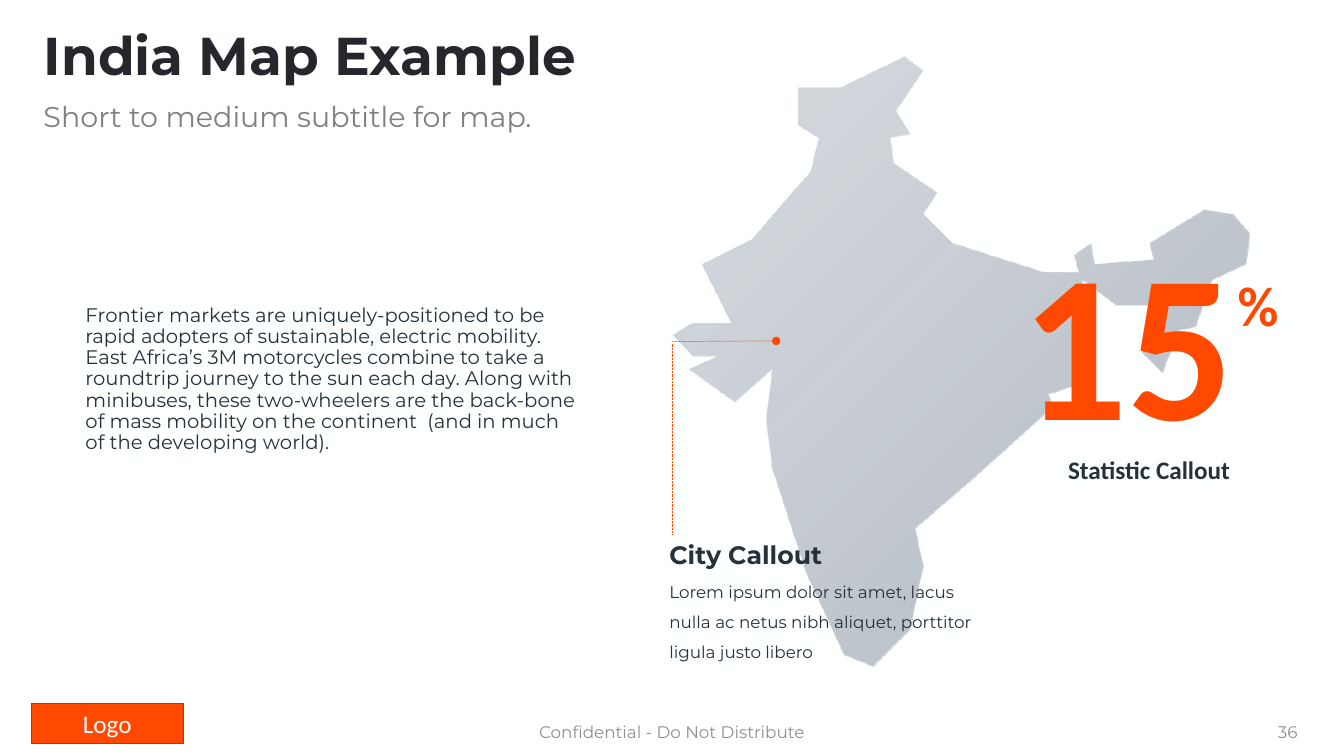
from lxml import etree
from pptx import Presentation
from pptx.dml.color import RGBColor
from pptx.enum.dml import MSO_LINE
from pptx.enum.shapes import MSO_CONNECTOR, MSO_SHAPE
from pptx.enum.text import MSO_ANCHOR, PP_ALIGN
from pptx.oxml import parse_xml
from pptx.oxml.ns import nsdecls, qn
from pptx.util import Pt

WHITE, ORANGE, INK, GREY = "FEFFFF", "FF4900", "25323C", "8E9092"
HUNDREDTH_INCH = Pt(0.72)

INDIA_OUTLINE = [
    (1153, 370), (1169, 328), (1186, 324), (1202, 278), (1236, 262), (1240, 232),
    (1223, 212), (1194, 208), (1140, 241), (1144, 257), (1086, 262), (1082, 241),
    (1065, 253), (1070, 270), (1036, 270), (945, 241), (916, 212), (930, 191),
    (887, 162), (883, 137), (903, 133), (889, 110), (916, 70), (897, 56),
    (833, 87), (791, 87), (791, 124), (812, 137), (804, 170), (775, 203),
    (746, 237), (696, 262), (725, 320), (687, 320), (667, 332), (687, 353),
    (712, 353), (683, 366), (729, 399), (766, 366), (760, 416), (766, 465),
    (800, 569), (837, 649), (866, 661), (903, 624), (916, 561), (908, 524),
    (966, 474), (1045, 403), (1040, 391), (1086, 376), (1070, 312), (1074, 278),
    (1107, 303), (1149, 303), (1132, 349),
]


def color(value):
    return RGBColor.from_string(value)


def write(box, text, size, fill, font="Montserrat", bold=False,
          align=PP_ALIGN.LEFT, anchor=MSO_ANCHOR.TOP, spacing=None, wrap=True):
    frame = box.text_frame
    frame.text = text
    frame.word_wrap = wrap
    frame.vertical_anchor = anchor
    para = frame.paragraphs[0]
    para.alignment = align
    if spacing:
        para.line_spacing = spacing
    span = para.runs[0]
    span.font.size = Pt(size)
    span.font.name = font
    span.font.bold = bold
    span.font.color.rgb = color(fill)


def add_text(page, left, top, width, height, text, size, fill, **style):
    box = page.shapes.add_textbox(Pt(left), Pt(top), Pt(width), Pt(height))
    write(box, text, size, fill, **style)


def add_title(page, text):
    title = page.shapes.title
    title.left, title.top, title.width, title.height = Pt(24), Pt(18), Pt(909), Pt(48)
    write(title, text, 38, "28262D", bold=True, anchor=MSO_ANCHOR.MIDDLE, spacing=0.9)


def add_logo_block(page):
    block = page.shapes.add_shape(MSO_SHAPE.RECTANGLE, Pt(22.3), Pt(502.5), Pt(108.7), Pt(28.8))
    block.shadow.inherit = False
    block.fill.solid()
    block.fill.fore_color.rgb = color("FF4800")
    block.line.color.rgb = color("BD3500")
    block.line.width = Pt(1)
    write(block, "Logo", 18, WHITE, font="Calibri",
          align=PP_ALIGN.CENTER, anchor=MSO_ANCHOR.MIDDLE)


def add_map(page):
    builder = page.shapes.build_freeform(*INDIA_OUTLINE[0], scale=HUNDREDTH_INCH)
    builder.add_line_segments(INDIA_OUTLINE[1:], close=True)
    india = builder.convert_to_shape()
    india.shadow.inherit = False
    stops = "".join(
        f'<a:gs pos="{position}"><a:srgbClr val="939DA9"><a:alpha val="{alpha}"/></a:srgbClr></a:gs>'
        for position, alpha in ((0, 35000), (99000, 70000)))
    gradient = parse_xml(
        f'<a:gradFill {nsdecls("a")} rotWithShape="1"><a:gsLst>{stops}</a:gsLst>'
        '<a:lin ang="2700000" scaled="0"/></a:gradFill>')
    india.element.spPr.find(qn("a:custGeom")).addnext(gradient)
    india.line.width = Pt(0.25)
    india.line.color.rgb = color(WHITE)
    line_color = india.element.spPr.find(qn("a:ln")).find(".//" + qn("a:srgbClr"))
    etree.SubElement(line_color, qn("a:alpha")).set("val", "50000")


def add_leader(page, start, end, dot=False):
    leader = page.shapes.add_connector(
        MSO_CONNECTOR.STRAIGHT, *(Pt(value) for value in start + end))
    leader.line.width = Pt(0.5)
    leader.line.color.rgb = color(ORANGE)
    leader.line.dash_style = MSO_LINE.ROUND_DOT
    properties = leader.element.spPr
    if dot:
        etree.SubElement(properties.find(qn("a:ln")), qn("a:tailEnd")).set("type", "oval")
    etree.SubElement(properties, qn("a:effectLst"))


def main():
    deck = Presentation()
    deck.slide_width, deck.slide_height = Pt(960), Pt(540)
    page = deck.slides.add_slide(deck.slide_layouts[5])
    page.background.fill.solid()
    page.background.fill.fore_color.rgb = color(WHITE)

    add_logo_block(page)
    add_title(page, "India Map Example")
    middle = MSO_ANCHOR.MIDDLE
    add_text(page, 318, 508.3, 324, 28.8, "Confidential - Do Not Distribute", 12, GREY,
             align=PP_ALIGN.CENTER, anchor=middle)
    add_text(page, 718, 508.3, 216, 28.8, "36", 12, GREY, align=PP_ALIGN.RIGHT, anchor=middle)
    add_text(page, 24, 70.5, 909, 28.8, "Short to medium subtitle for map.", 20.4, "808080",
             anchor=middle, spacing=0.8)

    add_map(page)
    add_text(page, 648, 146.9, 240.5, 189.4, "15", 150, ORANGE, font="Calibri", bold=True,
             align=PP_ALIGN.RIGHT)
    add_text(page, 877, 190, 42.5, 55.4, "%", 40, ORANGE, font="Calibri", bold=True, wrap=False)
    add_text(page, 471, 381.6, 128, 28.8, "City Callout", 18, INK, bold=True)
    add_leader(page, (480, 244), (554.4, 243.5), dot=True)
    add_text(page, 471, 404.6, 243.4, 69.8,
             "Lorem ipsum dolor sit amet, lacus nulla ac netus nibh aliquet, "
             "porttitor ligula justo libero", 12, INK, spacing=1.5)
    add_leader(page, (480, 381.6), (480, 245.5))
    add_text(page, 720, 321.1, 201.6, 28.8, "Statistic Callout", 18, INK, font="Calibri",
             bold=True, align=PP_ALIGN.CENTER)
    add_text(page, 54, 211.7, 365, 118.8,
             "Frontier markets are uniquely-positioned to be rapid adopters of sustainable, "
             "electric mobility. East Africa’s 3M motorcycles combine to take a roundtrip "
             "journey to the sun each day. Along with minibuses, these two-wheelers are the "
             "back-bone of mass mobility on the continent  (and in much of the developing world).",
             14, "25323B", anchor=middle, spacing=0.9)
    deck.save("out.pptx")


if __name__ == "__main__":
    main()
